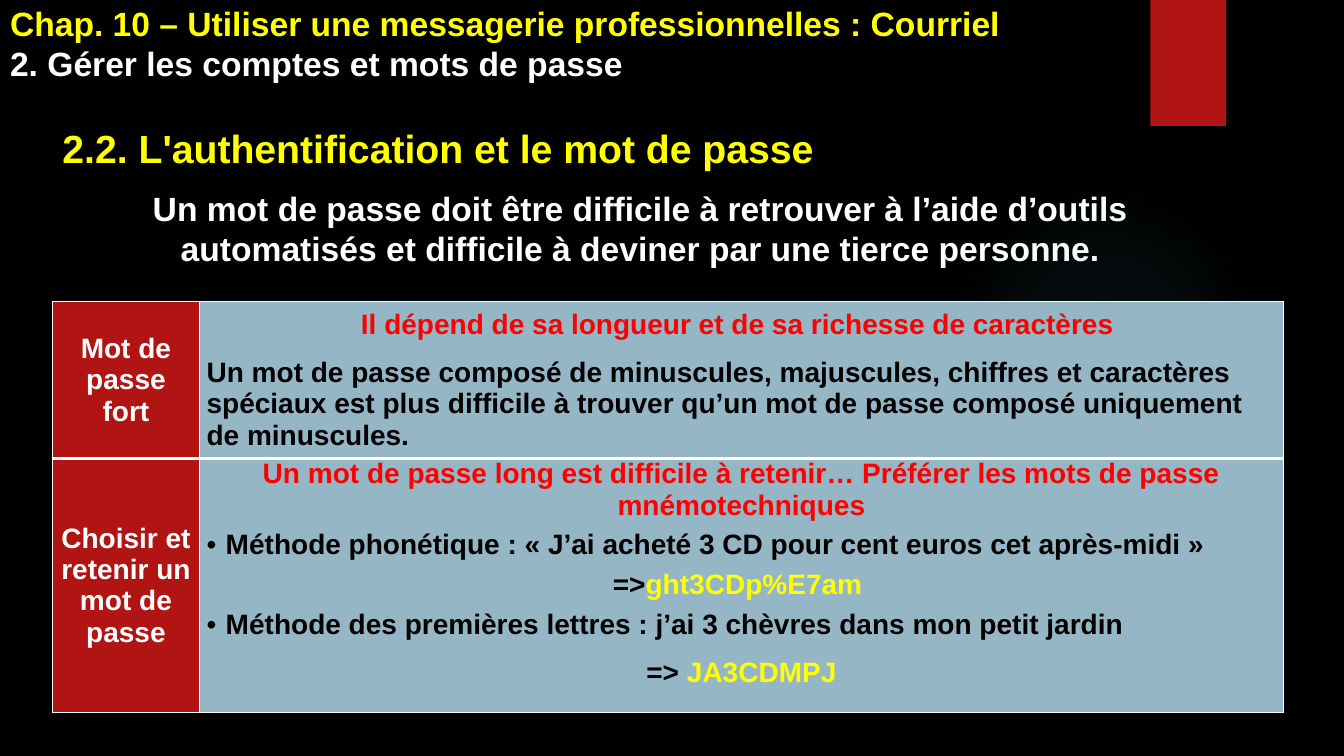
from dataclasses import dataclass, field
from typing import Any

from lxml.etree import SubElement
from pptx import Presentation
from pptx.dml.color import RGBColor
from pptx.enum.shapes import MSO_SHAPE as Preset
from pptx.enum.text import MSO_ANCHOR as Anchor, MSO_AUTO_SIZE as AutoSize, PP_ALIGN as Align
from pptx.oxml import parse_xml
from pptx.oxml.ns import nsdecls, qn
from pptx.util import Inches, Pt

COLOURS = {
    "black": "000000", "white": "FFFFFF", "yellow": "FFFF00", "red": "FF0000",
    "crimson": "B01513", "steel": "95B6C5", "teal": "50B9C1",
}
WIDTH, HEIGHT = Inches(13.33), Inches(7.5)
FONT = "Arial"
BULLET_INDENT = Inches(0.19)
GLOW_STOPS = [(0, 7), (36, 6), (69, 0)]
CELL_MARGINS = {
    "margin_left": Inches(0.07), "margin_right": Inches(0.07),
    "margin_top": 0, "margin_bottom": 0,
}


@dataclass(frozen=True)
class Area:
    left: float
    top: float
    width: float
    height: float

    def place(self) -> dict[str, int]:
        return {
            "left": across(self.left), "top": down(self.top),
            "width": across(self.width), "height": down(self.height),
        }


@dataclass(frozen=True)
class Run:
    text: str
    colour: str


@dataclass(frozen=True)
class Line:
    runs: list[Run]
    size: int = 20
    align: Align = Align.CENTER
    before: int = 0
    after: int = 0
    bullet: bool = False


@dataclass(frozen=True)
class Cell:
    fill: str
    lines: list[Line]
    anchor: Anchor = Anchor.MIDDLE
    borders: dict[str, int] = field(
        default_factory=lambda: {"lnL": 1, "lnR": 1, "lnT": 1, "lnB": 1})


GLOW = Area(70.59, 24.4, 23.11, 41.07)
RIBBON = Area(85.6, 0, 5.63, 16.67)
HEADER = Area(0, -0.13, 88.6, 11.87)
INTRO = Area(3.9, 15.73, 87.47, 20.67)
TABLE = Area(3.9, 39.87, 91.6, 54.4)
COLUMN_SHARES = [10.95, 80.65]
ROW_SHARES = [20.8, 33.6]

HEADER_LINES = [
    Line([Run("Chap. 10 – Utiliser une messagerie professionnelles : Courriel", "yellow")],
         24, Align.LEFT),
    Line([Run("2. Gérer les comptes et mots de passe", "white")], 24, Align.LEFT),
]
INTRO_LINES = [
    Line([Run("2.2. L'authentification et le mot de passe", "yellow")], 28, Align.LEFT, after=6),
    Line([Run("Un mot de passe doit être difficile à retrouver à l’aide d’outils automatisés "
              "et difficile à deviner par une tierce personne.", "white")],
         24, before=6, after=18),
]
THICK_BOTTOM = {"lnL": 1, "lnR": 1, "lnT": 1, "lnB": 3}
CELLS = [
    [
        Cell("crimson", [Line([Run("Mot de passe fort", "white")], after=6)],
             borders=THICK_BOTTOM),
        Cell("steel", [
            Line([Run("Il dépend de sa longueur et de sa richesse de caractères ", "red")],
                 after=6),
            Line([Run("Un mot de passe composé de minuscules, majuscules, chiffres et "
                      "caractères spéciaux est plus difficile à trouver qu’un mot de passe "
                      "composé uniquement de minuscules.", "black")],
                 align=Align.LEFT, before=6, after=6),
        ], borders=THICK_BOTTOM),
    ],
    [
        Cell("crimson", [Line([Run("Choisir et retenir un mot de passe", "white")])]),
        Cell("steel", [
            Line([Run("Un mot de passe long est difficile à retenir… Préférer les mots de "
                      "passe mnémotechniques", "red")]),
            Line([Run("Méthode phonétique : « J’ai acheté 3 CD pour cent euros cet "
                      "après-midi » ", "black")],
                 align=Align.LEFT, before=6, bullet=True),
            Line([Run("=>", "black"), Run("ght3CDp%E7am ", "yellow")], before=6),
            Line([Run("Méthode des premières lettres : j’ai 3 chèvres dans mon petit jardin ",
                      "black")],
                 align=Align.JUSTIFY, before=6, after=6, bullet=True),
            Line([Run("=> ", "black"), Run("JA3CDMPJ", "yellow")], before=6, after=6),
        ], Anchor.TOP),
    ],
]


def across(share: float) -> int:
    return round(WIDTH * share / 100)


def down(share: float) -> int:
    return round(HEIGHT * share / 100)


def rgb(name: str) -> RGBColor:
    return RGBColor.from_string(COLOURS[name])


def apply(target: Any, formats: dict[str, Any]) -> None:
    for name, value in formats.items():
        setattr(target, name, value)


def write_lines(frame: Any, lines: list[Line]) -> None:
    for index, line in enumerate(lines):
        paragraph = frame.add_paragraph() if index else frame.paragraphs[0]
        apply(paragraph, {
            "alignment": line.align, "line_spacing": 1.0,
            "space_before": Pt(line.before), "space_after": Pt(line.after),
        })
        properties = paragraph._p.get_or_add_pPr()
        indent = BULLET_INDENT if line.bullet else 0
        properties.set("marL", str(indent))
        properties.set("indent", str(-indent))
        if line.bullet:
            SubElement(properties, qn("a:buFont")).set("typeface", FONT)
            SubElement(properties, qn("a:buChar")).set("char", "•")
        else:
            SubElement(properties, qn("a:buNone"))
        for part in line.runs:
            run = paragraph.add_run()
            run.text = part.text
            apply(run.font, {"name": FONT, "size": Pt(line.size), "bold": True})
            run.font.color.rgb = rgb(part.colour)


def add_plain_shape(slide: Any, preset: Preset, area: Area, colour: str) -> Any:
    shape = slide.shapes.add_shape(preset, **area.place())
    shape.shadow.inherit = False
    shape.fill.solid()
    shape.fill.fore_color.rgb = rgb(colour)
    shape.line.fill.background()
    return shape


def add_glow(slide: Any) -> None:
    shape = add_plain_shape(slide, Preset.OVAL, GLOW, "teal")
    stops = "".join(
        f'<a:gs pos="{position * 1000}"><a:srgbClr val="{COLOURS["teal"]}">'
        f'<a:alpha val="{alpha * 1000}"/></a:srgbClr></a:gs>'
        for position, alpha in GLOW_STOPS)
    gradient = parse_xml(
        f'<a:gradFill {nsdecls("a")}><a:gsLst>{stops}</a:gsLst><a:path path="circle">'
        '<a:fillToRect l="50000" t="50000" r="50000" b="50000"/></a:path></a:gradFill>')
    solid = shape._element.spPr.find(qn("a:solidFill"))
    solid.getparent().replace(solid, gradient)


def fill_placeholder(shape: Any, area: Area, lines: list[Line], anchor: Anchor) -> None:
    apply(shape, area.place())
    apply(shape.text_frame, {
        "word_wrap": True, "auto_size": AutoSize.NONE, "vertical_anchor": anchor})
    write_lines(shape.text_frame, lines)


def format_cell(cell: Any, content: Cell) -> None:
    apply(cell, {**CELL_MARGINS, "vertical_anchor": content.anchor})
    write_lines(cell.text_frame, content.lines)
    properties = cell._tc.get_or_add_tcPr()
    for side, width in content.borders.items():
        border = SubElement(properties, qn(f"a:{side}"), w=str(Pt(width)))
        solid = SubElement(border, qn("a:solidFill"))
        SubElement(solid, qn("a:srgbClr")).set("val", COLOURS["white"])
    cell.fill.solid()
    cell.fill.fore_color.rgb = rgb(content.fill)


def add_password_table(slide: Any) -> None:
    table = slide.shapes.add_table(len(ROW_SHARES), len(COLUMN_SHARES), **TABLE.place()).table
    apply(table, {"first_row": False, "horz_banding": False})
    for column, share in zip(table.columns, COLUMN_SHARES):
        column.width = across(share)
    for row, share, contents in zip(table.rows, ROW_SHARES, CELLS):
        row.height = down(share)
        for cell, content in zip(row.cells, contents):
            format_cell(cell, content)


def main() -> None:
    presentation = Presentation()
    apply(presentation, {"slide_width": WIDTH, "slide_height": HEIGHT})
    slide = presentation.slides.add_slide(presentation.slide_layouts[1])
    slide.background.fill.solid()
    slide.background.fill.fore_color.rgb = rgb("black")
    add_glow(slide)
    add_plain_shape(slide, Preset.RECTANGLE, RIBBON, "crimson")
    fill_placeholder(slide.shapes.title, HEADER, HEADER_LINES, Anchor.BOTTOM)
    fill_placeholder(slide.placeholders[1], INTRO, INTRO_LINES, Anchor.TOP)
    add_password_table(slide)
    presentation.save("out.pptx")


if __name__ == "__main__":
    main()
